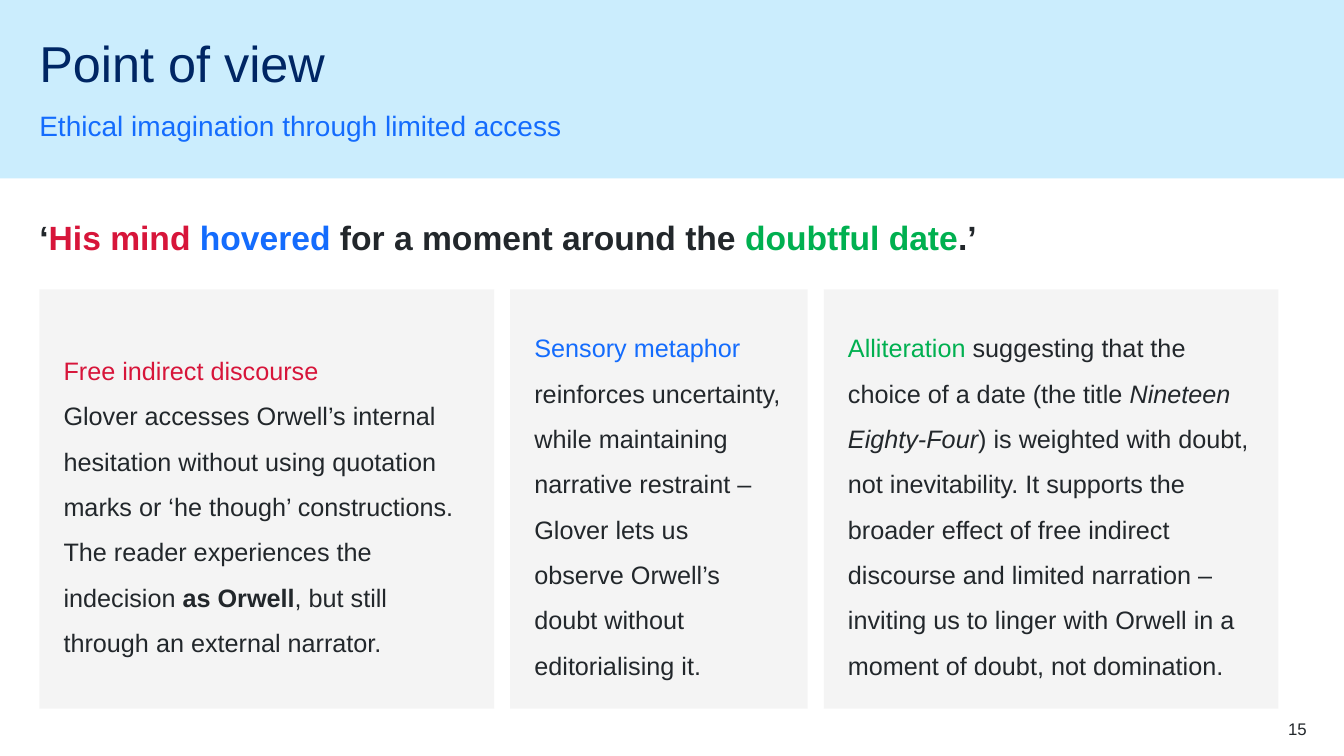
from pptx import Presentation
from pptx import util as u
from pptx.dml.color import RGBColor
from pptx.enum import shapes, text
from pptx.oxml.ns import qn
from lxml import etree

NAVY = RGBColor(0x00, 0x26, 0x64)
BLUE = RGBColor(0x14, 0x6C, 0xFD)
RED = RGBColor(0xD7, 0x15, 0x3A)
GREEN = RGBColor(0x00, 0xB0, 0x50)
INK = RGBColor(0x22, 0x27, 0x2B)
SKY = RGBColor(0xCB, 0xED, 0xFD)
GREY = RGBColor(0xEB, 0xEB, 0xEB)

LEFT = 0.39
PANEL_TOP, PANEL_HEIGHT, PANEL_GAP = 2.87, 4.16, 0.16


class SlideBuilder:
    font = "Arial"

    def __init__(self, slide):
        self.slide = slide

    def fill_text(self, frame, paragraphs, size, spacing=1.0, after=0,
                  align=text.PP_ALIGN.LEFT, anchor=text.MSO_ANCHOR.TOP, insets=(0, 0)):
        frame.word_wrap = True
        frame.auto_size = text.MSO_AUTO_SIZE.NONE
        frame.vertical_anchor = anchor
        frame.margin_left = frame.margin_right = u.Inches(insets[0])
        frame.margin_top = frame.margin_bottom = u.Inches(insets[1])
        for index, runs in enumerate(paragraphs):
            paragraph = frame.add_paragraph() if index else frame.paragraphs[0]
            paragraph.alignment = align
            paragraph.line_spacing = spacing
            paragraph.space_before = u.Pt(0)
            paragraph.space_after = u.Pt(after)
            for words, color, *styles in runs:
                run = paragraph.add_run()
                run.text = words
                run.font.name = self.font
                run.font.size = u.Pt(size)
                run.font.color.rgb = color
                run.font.bold = "bold" in styles
                run.font.italic = "italic" in styles

    def title(self, box, runs, **style):
        heading = self.slide.shapes.title
        heading.left, heading.top, heading.width, heading.height = map(u.Inches, box)
        self.fill_text(heading.text_frame, [runs], **style)

    def label(self, box, runs, **style):
        caption = self.slide.shapes.add_textbox(*map(u.Inches, box))
        self.fill_text(caption.text_frame, [runs], **style)

    def block(self, box, color, opacity=100):
        area = self.slide.shapes.add_shape(shapes.MSO_SHAPE.RECTANGLE, *map(u.Inches, box))
        area.shadow.inherit = False
        area.line.fill.background()
        area.fill.solid()
        area.fill.fore_color.rgb = color
        if opacity < 100:
            tint = area.element.spPr.find(".//" + qn("a:srgbClr"))
            etree.SubElement(tint, qn("a:alpha")).set("val", str(opacity * 1000))
        return area

    def band(self, box, color):
        header = self.block(box, color)
        self.slide.shapes.title.element.addprevious(header.element)

    def panel(self, box, paragraphs):
        card = self.block(box, GREY, opacity=50)
        self.fill_text(card.text_frame, paragraphs, size=18, spacing=1.5,
                       anchor=text.MSO_ANCHOR.MIDDLE, insets=(0.24, 0.05))


PANELS = [
    (4.51, [
        [("Free indirect discourse", RED)],
        [("Glover accesses Orwell’s internal hesitation without using quotation marks "
          "or ‘he though’ constructions. The reader experiences the indecision ", INK),
         ("as Orwell", INK, "bold"),
         (", but still through an external narrator.", INK)],
    ]),
    (2.95, [
        [("Sensory metaphor ", BLUE),
         ("reinforces uncertainty, while maintaining narrative restraint – Glover lets us "
          "observe Orwell’s doubt without editorialising it.", INK)],
    ]),
    (4.51, [
        [("Alliteration", GREEN),
         (" suggesting that the choice of a date (the title ", INK),
         ("Nineteen Eighty-Four", INK, "italic"),
         (") is weighted with doubt, not inevitability. It supports the broader effect of "
          "free indirect discourse and limited narration – inviting us to linger with "
          "Orwell in a moment of doubt, not domination.", INK)],
    ]),
]

QUOTE = [
    ("‘", INK, "bold"),
    ("His mind ", RED, "bold"),
    ("hovered", BLUE, "bold"),
    (" for a moment around the ", INK, "bold"),
    ("doubtful date", GREEN, "bold"),
    (".’", INK, "bold"),
]


def main():
    deck = Presentation()
    deck.slide_width, deck.slide_height = u.Inches(13.33), u.Inches(7.5)
    page = SlideBuilder(deck.slides.add_slide(deck.slide_layouts.get_by_name("Title Only")))

    page.band((0, 0, 13.33, 1.77), SKY)
    page.title((LEFT, 0.39, 12.56, 0.6), [("Point of view", NAVY)], size=36, spacing=0.9)
    page.label((LEFT, 1.07, 12.56, 0.34), [("Ethical imagination through limited access", BLUE)],
               size=20, spacing=1.5, after=12, anchor=text.MSO_ANCHOR.BOTTOM)
    page.label((12.17, 7.13, 0.79, 0.2), [("15", INK)], size=12, align=text.PP_ALIGN.RIGHT)
    page.label((LEFT, 1.95, 11.81, 0.81), QUOTE, size=24, spacing=1.5, after=12)

    left = LEFT
    for width, paragraphs in PANELS:
        page.panel((left, PANEL_TOP, width, PANEL_HEIGHT), paragraphs)
        left += width + PANEL_GAP

    deck.save("out.pptx")


if __name__ == "__main__":
    main()
